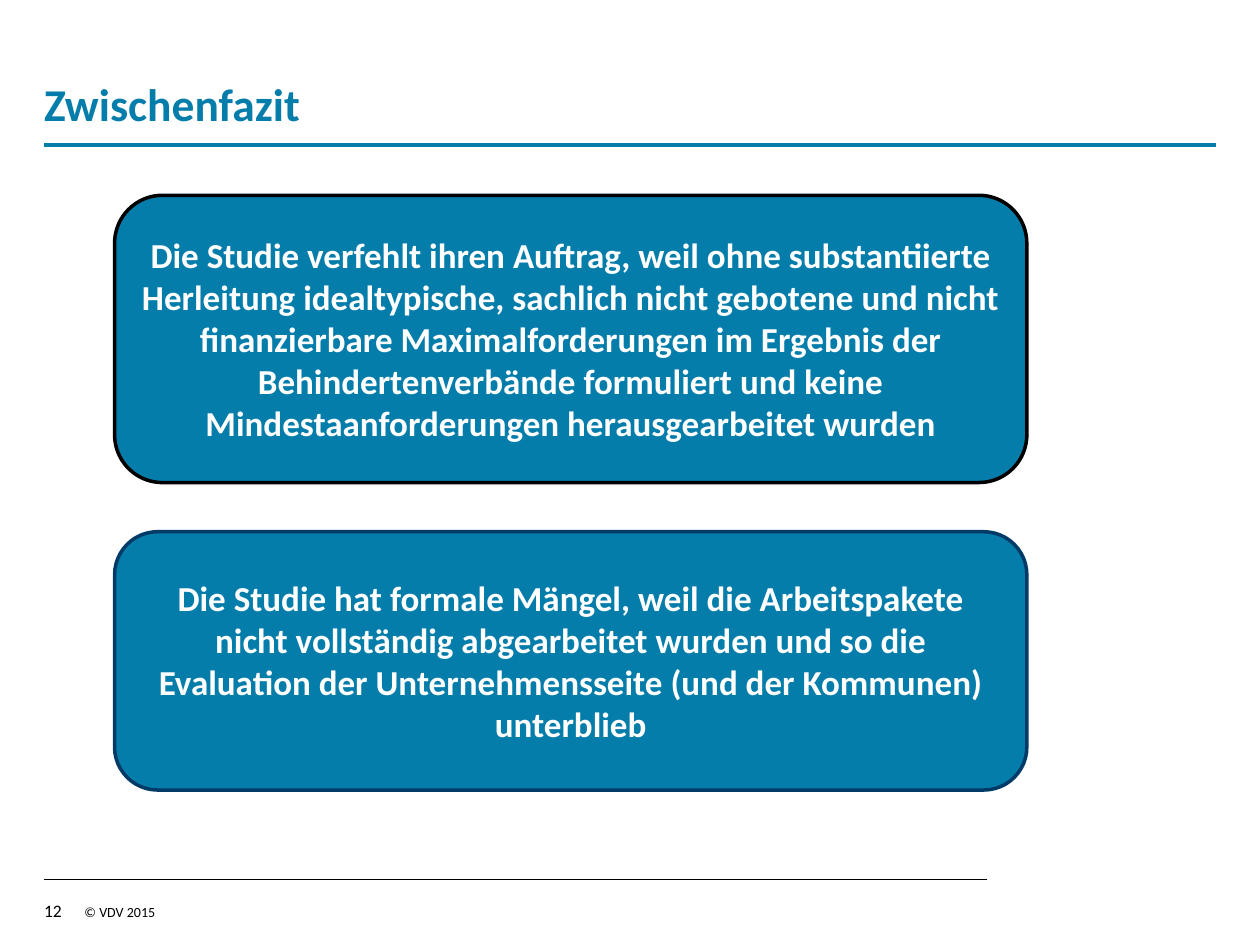
import pptx
import pptx.dml.color
import pptx.enum.shapes
import pptx.enum.text
import pptx.oxml.ns
import pptx.util
from lxml import etree
from pptx.util import Inches

TEAL = pptx.dml.color.RGBColor(0x05, 0x7D, 0xAA)
NAVY = pptx.dml.color.RGBColor(0x00, 0x3B, 0x68)
BLACK = pptx.dml.color.RGBColor(0x00, 0x00, 0x00)
WHITE = pptx.dml.color.RGBColor(0xFF, 0xFF, 0xFF)
FONT = "Calibri"
MARGIN = 0.35
ALIGN = pptx.enum.text.PP_ALIGN
ANCHOR = pptx.enum.text.MSO_ANCHOR

FINDINGS = [
    (1.55, 2.28, BLACK,
     "Die Studie verfehlt ihren Auftrag, weil ohne substantiierte Herleitung "
     "idealtypische, sachlich nicht gebotene und nicht finanzierbare "
     "Maximalforderungen im Ergebnis der Behindertenverbände formuliert und "
     "keine Mindestaanforderungen herausgearbeitet wurden"),
    (4.22, 2.05, NAVY,
     "Die Studie hat formale Mängel, weil die Arbeitspakete nicht vollständig "
     "abgearbeitet wurden und so die Evaluation der Unternehmensseite "
     "(und der Kommunen) unterblieb"),
]


def write_text(shape, text, *, size, color=BLACK, bold=False, align=ALIGN.LEFT,
               anchor=ANCHOR.TOP, insets=(0, 0, 0, 0)):
    """Fill the shape with one paragraph; insets are left, top, right, bottom."""
    frame = shape.text_frame
    frame.word_wrap = True
    frame.vertical_anchor = anchor
    (frame.margin_left, frame.margin_top,
     frame.margin_right, frame.margin_bottom) = map(Inches, insets)
    paragraph = frame.paragraphs[0]
    paragraph.alignment = align
    run = paragraph.add_run()
    run.text = text
    run.font.name = FONT
    run.font.size = pptx.util.Pt(size)
    run.font.bold = bold
    run.font.color.rgb = color


def add_text(slide, text, left, top, width, height, **text_format):
    box = slide.shapes.add_textbox(*map(Inches, (left, top, width, height)))
    write_text(box, text, **text_format)


def add_rule(slide, right, y, color, weight):
    """Draw a horizontal line from the left margin."""
    line = slide.shapes.add_connector(
        pptx.enum.shapes.MSO_CONNECTOR.STRAIGHT,
        *map(Inches, (MARGIN, y, right, y)))
    line.line.color.rgb = color
    line.line.width = pptx.util.Pt(weight)
    etree.SubElement(line._element.spPr, pptx.oxml.ns.qn("a:effectLst"))


def add_finding(slide, top, height, border, text):
    shape = slide.shapes.add_shape(
        pptx.enum.shapes.MSO_SHAPE.ROUNDED_RECTANGLE,
        *map(Inches, (0.91, top, 7.24, height)))
    shape.shadow.inherit = False
    shape.fill.solid()
    shape.fill.fore_color.rgb = TEAL
    shape.line.color.rgb = border
    shape.line.width = pptx.util.Pt(2)
    write_text(shape, text, size=20, color=WHITE, bold=True, align=ALIGN.CENTER,
               anchor=ANCHOR.MIDDLE, insets=(0.1, 0.05, 0.1, 0.05))


def main():
    presentation = pptx.Presentation()
    presentation.slide_width = Inches(10)
    presentation.slide_height = Inches(7.5)
    slide = presentation.slides.add_slide(presentation.slide_layouts[6])

    add_text(slide, "© VDV 2015", 0.67, 7.14, 0.71, 0.24, size=8,
             insets=(0, 0.03, 0, 0))
    add_rule(slide, 9.65, 1.15, TEAL, 2.5)
    add_rule(slide, 7.83, 6.98, BLACK, 0.5)
    add_text(slide, "Zwischenfazit", MARGIN, 0.13, 9.29, 0.95, size=26,
             color=TEAL, bold=True, anchor=ANCHOR.BOTTOM, insets=(0, 0, 0, 0.04))
    add_text(slide, "12", MARGIN, 7.14, 0.31, 0.24, size=10)
    for finding in FINDINGS:
        add_finding(slide, *finding)

    presentation.save("out.pptx")


if __name__ == "__main__":
    main()
